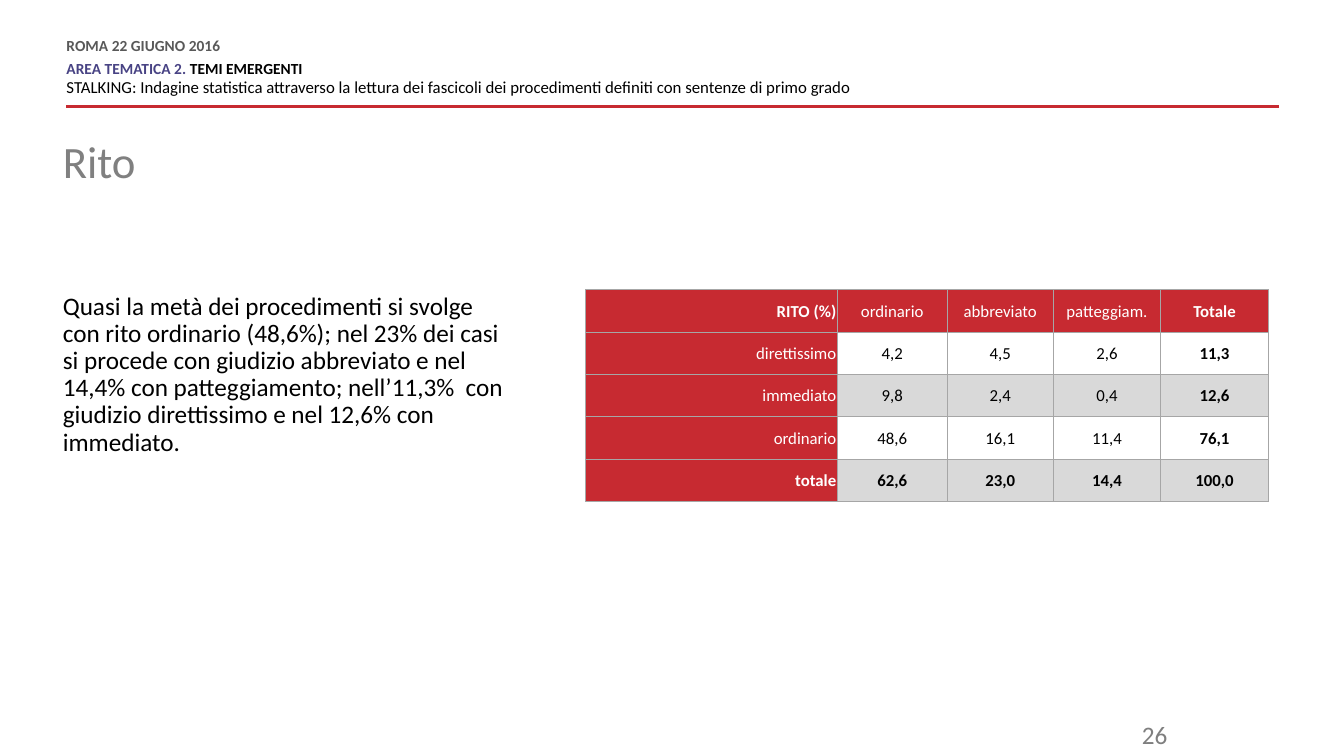
from lxml.etree import SubElement
from pptx import Presentation
from pptx.dml.color import RGBColor
from pptx.enum.shapes import MSO_CONNECTOR
from pptx.enum.text import MSO_ANCHOR, PP_ALIGN
from pptx.oxml.ns import qn
from pptx.util import Pt

COLORS = {
    "red": "C72A31", "violet": "484384", "black": "000000", "white": "FFFFFF",
    "dark": "595959", "gray": "808080", "number": "7F7F7F",
    "band": "D9D9D9", "border": "A6A6A6",
}


def apply(target, values):
    for name, value in values.items():
        setattr(target, name, value)


class SlideBuilder:
    font_name = "Calibri"

    def __init__(self, page):
        self.page = page

    def color(self, name):
        return RGBColor.from_string(COLORS[name])

    def span(self, para, text, size, color, bold=False):
        span = para.add_run()
        span.text = text
        apply(span.font, {"name": self.font_name, "size": Pt(size), "bold": bold})
        span.font.color.rgb = self.color(color)

    def text(self, area, paragraphs, margins=(0, 0, 0, 0)):
        box = self.page.shapes.add_textbox(*map(Pt, area))
        frame = box.text_frame
        sides = ("margin_left", "margin_top", "margin_right", "margin_bottom")
        apply(frame, {"word_wrap": True, **dict(zip(sides, map(Pt, margins)))})
        for index, (layout, spans) in enumerate(paragraphs):
            para = frame.add_paragraph() if index else frame.paragraphs[0]
            apply(para, layout)
            for values in spans:
                self.span(para, *values)

    def line(self, start, end, color, width):
        line = self.page.shapes.add_connector(
            MSO_CONNECTOR.STRAIGHT, *map(Pt, start + end))
        line.line.color.rgb = self.color(color)
        line.line.width = Pt(width)
        SubElement(line._element.spPr, qn("a:effectLst"))

    def border(self, cell, color, width):
        properties = cell._tc.get_or_add_tcPr()
        for position, side in enumerate(("lnL", "lnR", "lnT", "lnB")):
            edge = properties.makeelement(qn(f"a:{side}"), {"w": str(Pt(width))})
            fill = SubElement(edge, qn("a:solidFill"))
            SubElement(fill, qn("a:srgbClr"), val=COLORS[color])
            properties.insert(position, edge)

    def cell(self, cell, text, fill, color, bold, align):
        apply(cell, {
            "vertical_anchor": MSO_ANCHOR.MIDDLE, "margin_left": Pt(0.7),
            "margin_top": Pt(0.7), "margin_right": Pt(0.7), "margin_bottom": 0,
        })
        cell.fill.solid()
        cell.fill.fore_color.rgb = self.color(fill)
        self.border(cell, "border", 0.75)
        para = cell.text_frame.paragraphs[0]
        para.alignment = align
        self.span(para, text, 12, color, bold)

    def table(self, left, top, widths, row_height, rows):
        table = self.page.shapes.add_table(
            len(rows), len(widths), Pt(left), Pt(top),
            Pt(sum(widths)), Pt(row_height * len(rows))).table
        for column, width in zip(table.columns, widths):
            column.width = Pt(width)
        last_row, last_column = len(rows) - 1, len(widths) - 1
        for r, values in enumerate(rows):
            table.rows[r].height = Pt(row_height)
            for c, value in enumerate(values):
                heading = r == 0 or c == 0
                fill = "red" if heading else "white" if r % 2 else "band"
                bold = r == last_row or c == last_column or r == c == 0
                self.cell(table.cell(r, c), value, fill,
                          "white" if heading else "black", bold,
                          PP_ALIGN.CENTER if c else PP_ALIGN.RIGHT)


def main():
    deck = Presentation()
    deck.slide_width, deck.slide_height = Pt(960), Pt(540)
    slide = SlideBuilder(deck.slides.add_slide(deck.slide_layouts[6]))

    # Header with rule
    slide.line((913.7, 76.3), (47.5, 76.3), "red", 2)
    tight = {"line_spacing": Pt(10.8)}
    slide.text((47.5, 28, 600.5, 42.5), [
        ({**tight, "space_after": Pt(6)},
         [("ROMA 22 GIUGNO 2016", 11, "dark", True)]),
        (tight, [("AREA TEMATICA 2. ", 11, "violet", True),
                 ("TEMI EMERGENTI", 11, "black", True)]),
        ({**tight, "space_before": Pt(3), "space_after": Pt(6)},
         [("STALKING: Indagine statistica attraverso la lettura dei fascicoli "
           "dei procedimenti definiti con sentenze di primo grado", 12, "black")]),
    ])

    # Page number
    slide.text((756, 510.5, 85, 25.2),
               [({"alignment": PP_ALIGN.RIGHT}, [("26", 18, "number")])],
               (7.2, 3.6, 7.2, 3.6))

    # Title and comment
    body = {"line_spacing": 0.9}
    slide.text((44.9, 209.5, 320.4, 240.5), [(body, [(
        "Quasi la metà dei procedimenti si svolge con rito ordinario (48,6%); "
        "nel 23% dei casi si procede con giudizio abbreviato e nel 14,4% con "
        "patteggiamento; nell’11,3%  con giudizio direttissimo e nel 12,6% con "
        "immediato.", 18, "black")])])
    slide.text((44.9, 100, 399.6, 81.4), [(body, [("Rito", 32, "gray")])])

    # Table of procedures
    slide.table(418.4, 206.9, (179.7, 78.5, 75.8, 76.7, 77), 30.3, [
        ("RITO (%)", "ordinario", "abbreviato", "patteggiam.", "Totale"),
        ("direttissimo", "4,2", "4,5", "2,6", "11,3"),
        ("immediato", "9,8", "2,4", "0,4", "12,6"),
        ("ordinario", "48,6", "16,1", "11,4", "76,1"),
        ("totale", "62,6", "23,0", "14,4", "100,0"),
    ])

    deck.save("out.pptx")


if __name__ == "__main__":
    main()
